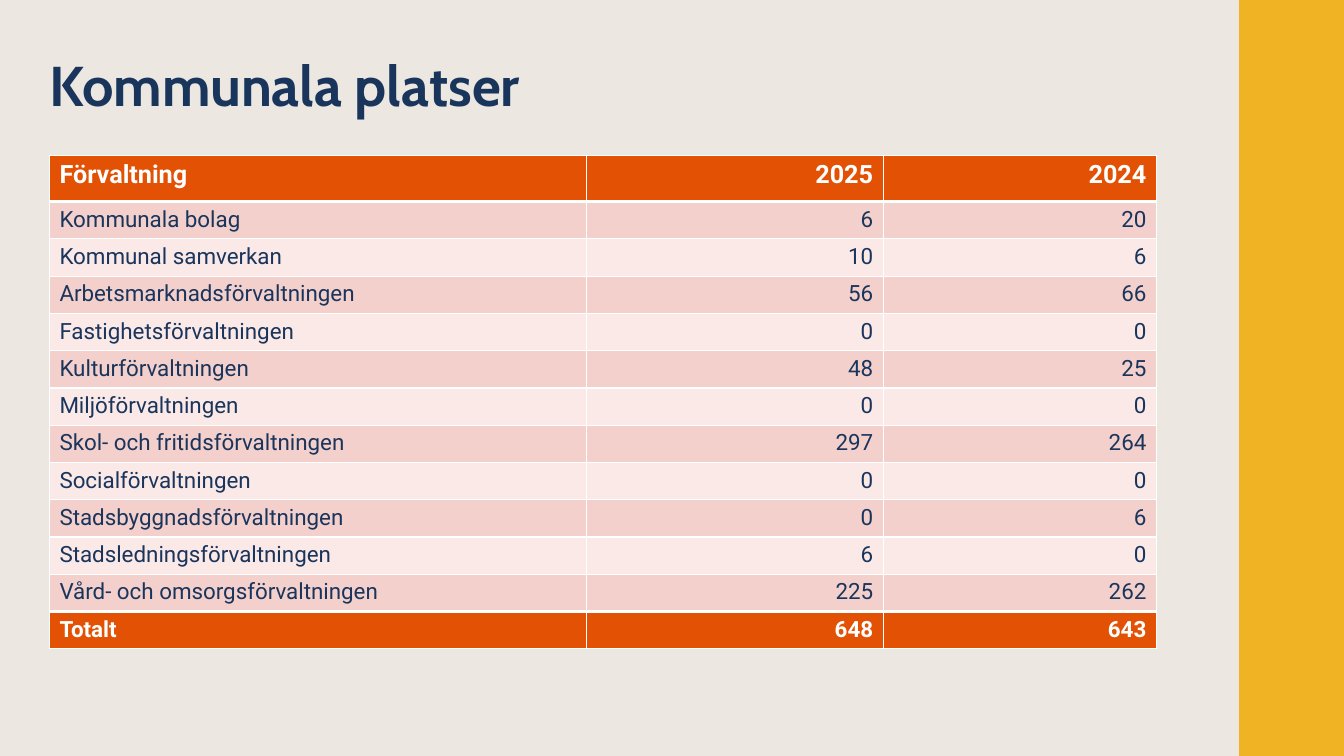
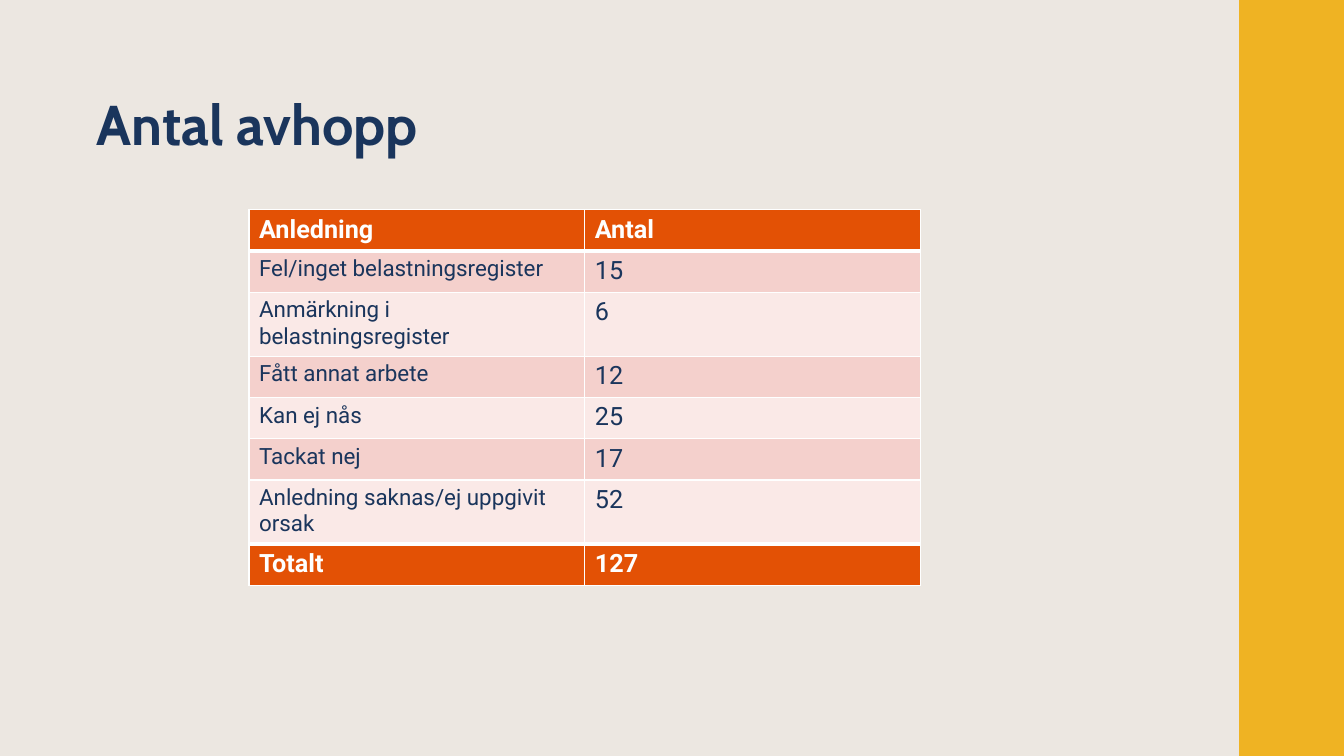
from lxml.etree import SubElement
from pptx import Presentation
from pptx.dml.color import RGBColor as RGB
from pptx.enum.shapes import MSO_SHAPE as SHAPE
from pptx.enum.text import MSO_ANCHOR as ANCHOR, PP_ALIGN as ALIGN
from pptx.oxml.ns import qn
from pptx.util import Inches, Pt

# Content
SLIDES = [
    {
        "title": "Kommunala platser", "title_at": (0.49, 0.57),
        "table_at": (0.49, 1.54),
        "cols": [5.33, 2.94, 2.71], "header_h": 0.46, "row_h": 0.37,
        "number_align": ALIGN.RIGHT, "number_size": "body", "total_size": "body",
        "rows": [
            ("Förvaltning", 2025, 2024),
            ("Kommunala bolag", 6, 20),
            ("Kommunal samverkan", 10, 6),
            ("Arbetsmarknadsförvaltningen", 56, 66),
            ("Fastighetsförvaltningen", 0, 0),
            ("Kulturförvaltningen", 48, 25),
            ("Miljöförvaltningen", 0, 0),
            ("Skol- och fritidsförvaltningen", 297, 264),
            ("Socialförvaltningen", 0, 0),
            ("Stadsbyggnadsförvaltningen", 0, 6),
            ("Stadsledningsförvaltningen", 6, 0),
            ("Vård- och omsorgsförvaltningen", 225, 262),
            ("Totalt", 648, 643),
        ],
    },
    {
        "title": "Antal avhopp", "title_at": (0.96, 0.95),
        "table_at": (2.47, 2.08),
        "cols": [3.33, 3.33], "header_h": 0.41, "row_h": 0.41,
        "number_align": ALIGN.LEFT, "number_size": "large", "total_size": "large",
        "rows": [
            ("Anledning", "Antal"),
            ("Fel/inget belastningsregister", 15),
            ("Anmärkning i belastningsregister", 6),
            ("Fått annat arbete", 12),
            ("Kan ej nås", 25),
            ("Tackat nej", 17),
            ("Anledning saknas/ej uppgivit orsak", 52),
            ("Totalt", 127),
        ],
    },
]

# Theme
THEME = {
    "size": (13.33, 7.5), "band_w": 1.04, "title_box": (10.47, 0.61),
    "color": {"back": "ECE7E1", "band": "EFB323", "ink": "1A355C",
              "accent": "E35105", "white": "FEFFFF",
              "odd": "F4D0CC", "even": "FAE9E7"},
    "pt": {"title": 40, "large": 18, "body": 16, "thin": 1, "thick": 3},
    "font": {"title": "Cabin", "text": "Roboto"},
}
COLOR, PT = THEME["color"], THEME["pt"]


def color(name):
    return RGB.from_string(COLOR[name])


def paint(fill, name):
    fill.solid()
    fill.fore_color.rgb = color(name)


def write(p, text, ink, **fmt):
    r = p.add_run()
    r.text = str(text)
    for key, value in fmt.items():
        setattr(r.font, key, value)
    r.font.color.rgb = color(ink)


def add_border(cell, side, weight):
    ln = SubElement(cell._tc.get_or_add_tcPr(), qn(f"a:ln{side}"),
                    w=str(Pt(PT[weight])))
    fill = SubElement(ln, qn("a:solidFill"))
    SubElement(fill, qn("a:srgbClr"), val=COLOR["white"])


def add_band(s):
    w, h = THEME["size"]
    band_w = THEME["band_w"]
    sp = s.shapes.add_shape(SHAPE.RECTANGLE, Inches(w - band_w), 0,
                            Inches(band_w), Inches(h))
    sp.shadow.inherit = False
    paint(sp.fill, "band")
    sp.line.fill.background()


def add_title(s, text, at):
    box = s.shapes.add_textbox(*map(Inches, at + THEME["title_box"]))
    tf = box.text_frame
    frame = {"word_wrap": True, "vertical_anchor": ANCHOR.BOTTOM,
             "margin_left": 0, "margin_top": 0,
             "margin_right": 0, "margin_bottom": 0}
    for key, value in frame.items():
        setattr(tf, key, value)
    p = tf.paragraphs[0]
    p.line_spacing = 0.9
    write(p, text, "ink", size=Pt(PT["title"]), bold=True,
          name=THEME["font"]["title"])


def add_data_table(s, data):
    rows, cols = data["rows"], data["cols"]
    last = len(rows) - 1
    heights = [data["header_h"]] + [data["row_h"]] * last
    box = (*data["table_at"], sum(cols), sum(heights))
    table = s.shapes.add_table(len(rows), len(cols), *map(Inches, box)).table
    for col, w in zip(table.columns, cols):
        col.width = Inches(w)
    for row, h in zip(table.rows, heights):
        row.height = Inches(h)

    for i, row in enumerate(rows):
        strong = i in (0, last)
        back = "accent" if strong else "odd" if i % 2 else "even"
        # Thick rules separate the header and the total from the body
        top = "thick" if i in (1, last) else "thin"
        bottom = "thick" if i in (0, last - 1) else "thin"
        for j, text in enumerate(row):
            cell = table.cell(i, j)
            for side, weight in zip("LRTB", ("thin", "thin", top, bottom)):
                add_border(cell, side, weight)
            paint(cell.fill, back)
            if i == 0:
                size = "large"
            elif i == last:
                size = data["total_size"]
            else:
                size = data["number_size"] if j else "body"
            p = cell.text_frame.paragraphs[0]
            p.alignment = data["number_align"] if j else ALIGN.LEFT
            write(p, text, "white" if strong else "ink", size=Pt(PT[size]),
                  bold=strong, name=THEME["font"]["text"])


def main():
    prs = Presentation()
    prs.slide_width, prs.slide_height = map(Inches, THEME["size"])
    paint(prs.slide_master.background.fill, "back")
    for data in SLIDES:
        s = prs.slides.add_slide(prs.slide_layouts[6])
        add_band(s)
        add_title(s, data["title"], data["title_at"])
        add_data_table(s, data)
    prs.save("out.pptx")


if __name__ == "__main__":
    main()
